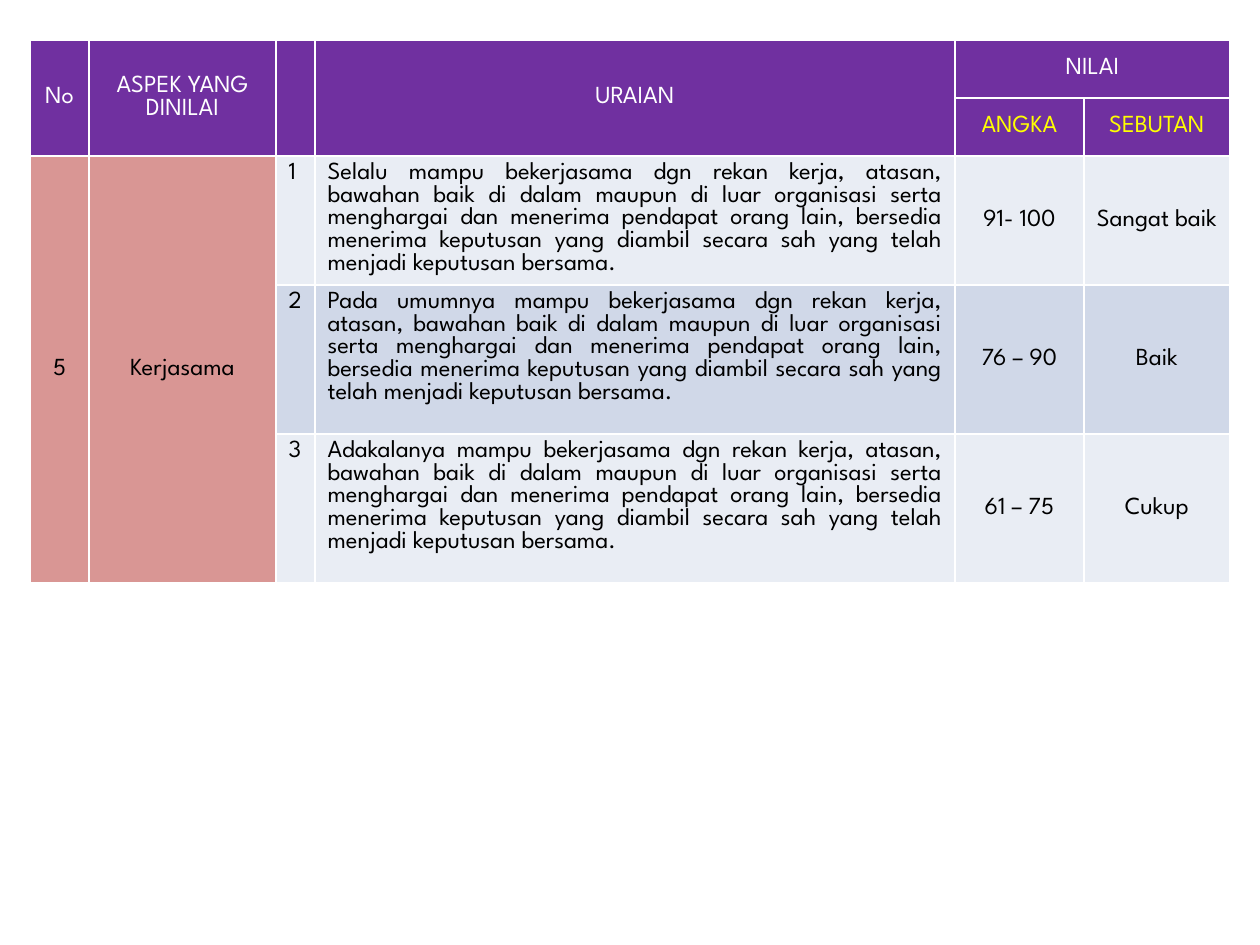
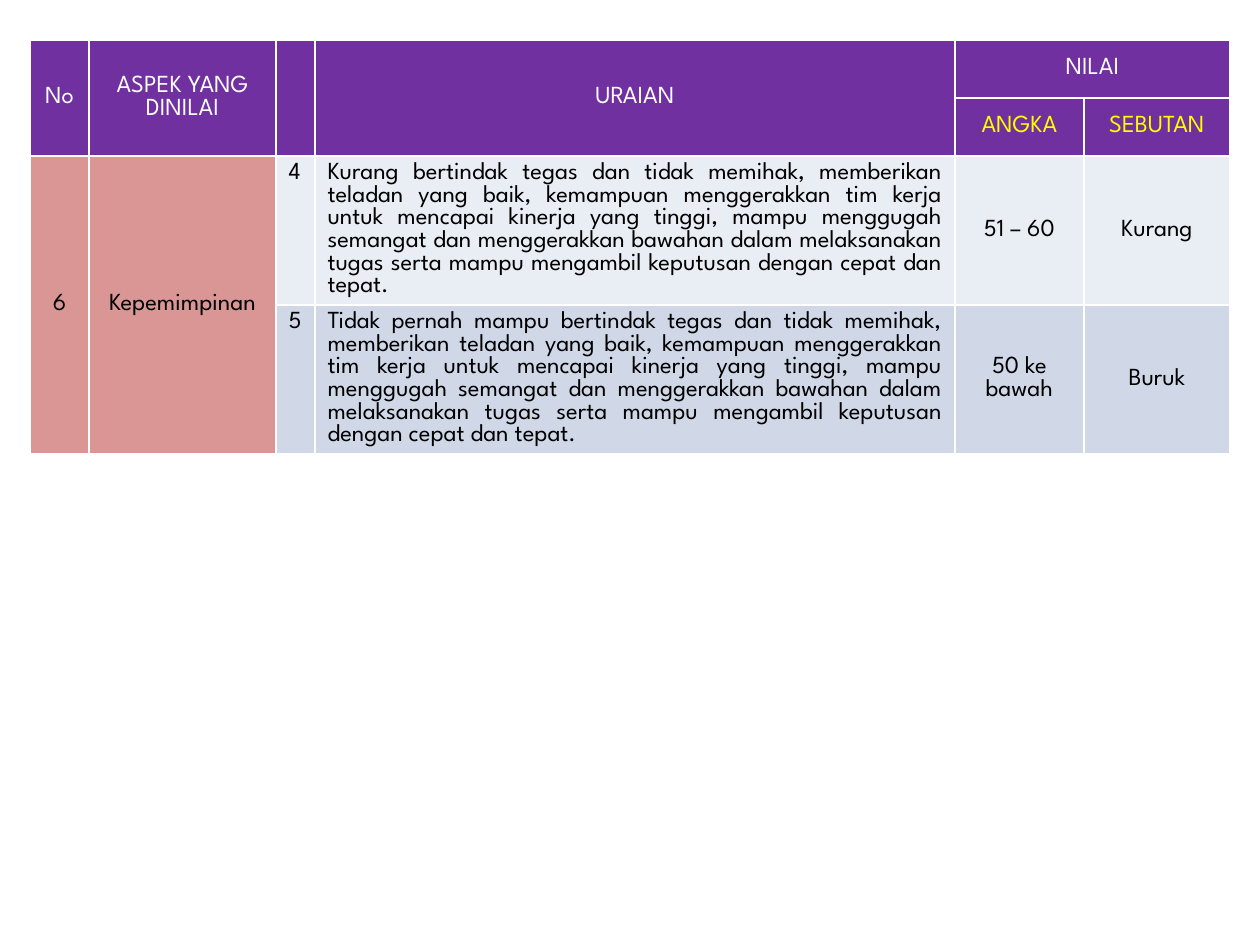
from lxml import etree
from pptx import Presentation
from pptx import util as u
from pptx.dml.color import RGBColor
from pptx.enum import text
from pptx.oxml.ns import qn

PX = 914400 / 126
FONT = "League Spartan"
PURPLE, PINK, WHITE, YELLOW, BLACK = "7030A0", "D99694", "FFFFFF", "FFFF00", "000000"
BANDS = ["E9EDF4", "D0D8E8"]
COLS = [59, 187, 39, 640, 129, 146]
HEADER_ROW = 58
CENTER, LEFT, JUSTIFY = text.PP_ALIGN.CENTER, text.PP_ALIGN.LEFT, text.PP_ALIGN.JUSTIFY
HEADERS = ["No", "ASPEK YANG DINILAI", "", "URAIAN", "NILAI"]

kerjasama = ("mampu bekerjasama dgn rekan kerja, atasan, bawahan baik di dalam maupun di luar "
             "organisasi serta menghargai dan menerima pendapat orang lain, bersedia menerima "
             "keputusan yang diambil secara sah yang telah menjadi keputusan bersama.")
kepemimpinan = ("bertindak tegas dan tidak memihak, memberikan teladan yang baik, kemampuan "
                "menggerakkan tim kerja untuk mencapai kinerja yang tinggi, mampu menggugah "
                "semangat dan menggerakkan bawahan dalam melaksanakan tugas serta mampu "
                "mengambil keputusan dengan cepat dan tepat.")
SLIDES = [
    ("5", "Kerjasama", [
        (129, "1", "Selalu " + kerjasama, "91- 100", "Sangat baik"),
        (149, "2", "Pada umumnya " + kerjasama, "76 – 90", "Baik"),
        (149, "3", "Adakalanya " + kerjasama, "61 – 75", "Cukup"),
    ]),
    ("6", "Kepemimpinan", [
        (149, "4", "Kurang " + kepemimpinan, "51 – 60", "Kurang"),
        (149, "5", "Tidak pernah mampu " + kepemimpinan, "50 ke bawah", "Buruk"),
    ]),
]


def px(n):
    return u.Emu(round(n * PX))


def put(cell, words, color, align=CENTER, anchor=text.MSO_ANCHOR.MIDDLE):
    cell.text = words
    cell.vertical_anchor = anchor
    p = cell.text_frame.paragraphs[0]
    p.alignment = align
    p.font.name, p.font.size, p.font.bold = FONT, u.Pt(14), False
    p.font.color.rgb = RGBColor.from_string(color)


prs = Presentation()
prs.slide_width, prs.slide_height = px(1260), px(945)

for number, aspect, levels in SLIDES:
    s = prs.slides.add_slide(prs.slide_layouts[6])
    heights = [HEADER_ROW] * 2 + [level[0] for level in levels]
    frame = s.shapes.add_table(len(heights), len(COLS), px(30), px(40),
                               px(sum(COLS)), px(sum(heights)))
    tbl = frame.table
    for col, width in zip(tbl.columns, COLS):
        col.width = px(width)
    for row, height in zip(tbl.rows, heights):
        row.height = px(height)

    for i in range(len(heights)):
        for j in range(len(COLS)):
            cell = tbl.cell(i, j)
            tcPr = cell._tc.get_or_add_tcPr()
            for side in ("a:lnL", "a:lnR", "a:lnT", "a:lnB"):
                ln = etree.SubElement(tcPr, qn(side), w=str(u.Pt(1)))
                fill = etree.SubElement(ln, qn("a:solidFill"))
                etree.SubElement(fill, qn("a:srgbClr"), val=WHITE)
            color = PURPLE if i < 2 else PINK if j < 2 else BANDS[i % 2]
            cell.fill.solid()
            cell.fill.fore_color.rgb = RGBColor.from_string(color)

    for j, words in enumerate(HEADERS):
        put(tbl.cell(0, j), words, WHITE)
    for j in range(4):
        tbl.cell(0, j).merge(tbl.cell(1, j))
    tbl.cell(0, 4).merge(tbl.cell(0, 5))
    put(tbl.cell(1, 4), "ANGKA", YELLOW)
    put(tbl.cell(1, 5), "SEBUTAN", YELLOW)

    for j, words in enumerate([number, aspect]):
        put(tbl.cell(2, j), words, BLACK)
        tbl.cell(2, j).merge(tbl.cell(len(heights) - 1, j))
    for i, (height, level, description, score, grade) in enumerate(levels, 2):
        put(tbl.cell(i, 2), level, BLACK, LEFT, text.MSO_ANCHOR.TOP)
        put(tbl.cell(i, 3), description, BLACK, JUSTIFY, text.MSO_ANCHOR.TOP)
        put(tbl.cell(i, 4), score, BLACK)
        put(tbl.cell(i, 5), grade, BLACK)

prs.save("out.pptx")
